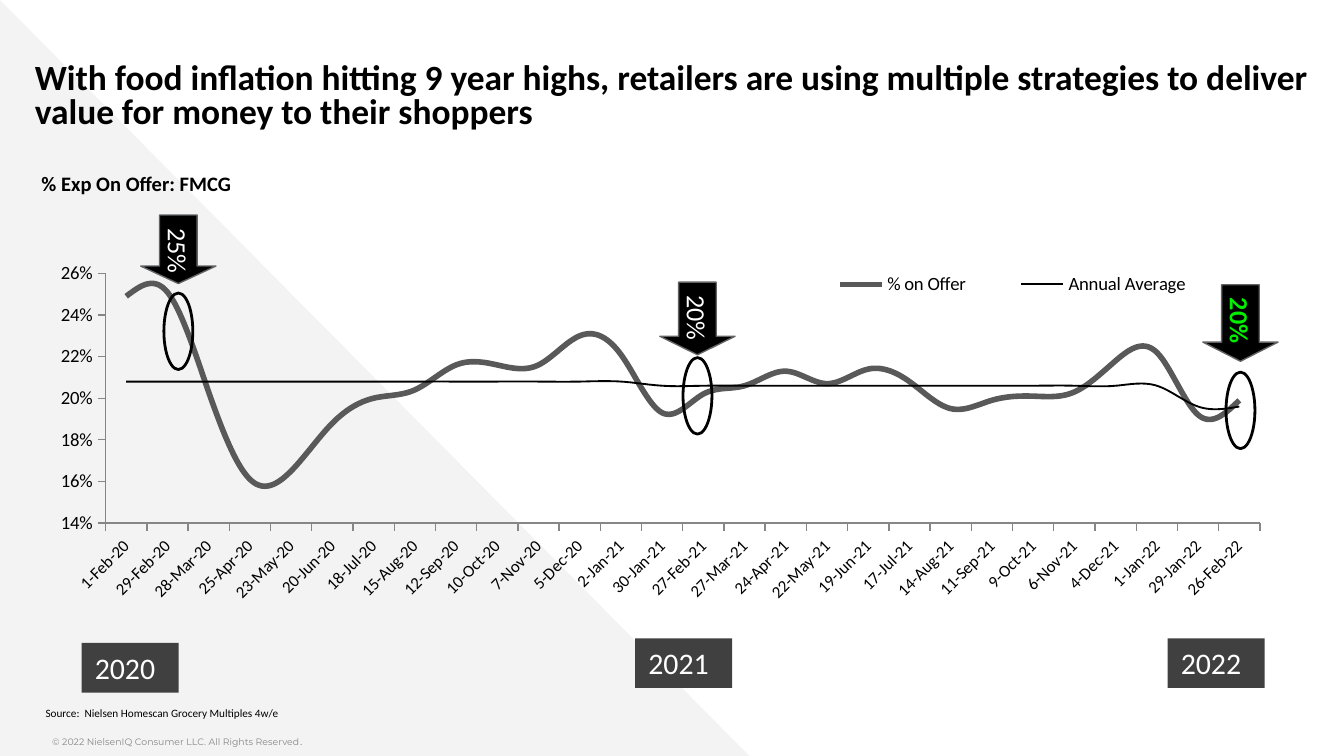
from pptx import Presentation
from pptx.chart.data import CategoryChartData as ChartData
from pptx.dml.color import RGBColor
from pptx.enum.chart import XL_CHART_TYPE as Kind, XL_LEGEND_POSITION as Side
from pptx.enum.chart import XL_MARKER_STYLE as Dot
from pptx.enum.chart import XL_TICK_LABEL_POSITION as Label, XL_TICK_MARK as Tick
from pptx.enum.shapes import MSO_SHAPE as Form
from pptx.enum.text import MSO_ANCHOR as Anchor, PP_ALIGN as Align
from pptx.oxml import parse_xml
from pptx.oxml.ns import nsdecls, qn
from pptx.util import Pt

OFFER = [
    0.249, 0.251, 0.203, 0.161, 0.165, 0.188, 0.2, 0.204, 0.216, 0.216,
    0.216, 0.23, 0.221, 0.193, 0.202, 0.206, 0.213, 0.207, 0.214, 0.208,
    0.195, 0.199, 0.201, 0.203, 0.218, 0.222, 0.192, 0.199,
]
MEAN = [0.208] * 13 + [0.206] * 13 + [0.196] * 2
DATES = range(43862, 44619, 28)
DAY = "d-mmm-yy"


def paint(part, color):
    part.solid()
    part.fore_color.rgb = RGBColor.from_string(color)


def style(font, size, color="000000", bold=False, name="Calibri"):
    font.size, font.bold, font.name = Pt(size), bold, name
    font.color.rgb = RGBColor.from_string(color)


def write(shape, text, size, color="000000", bold=False, name="Calibri",
          inset=(7.2, 3.6), wrap=False, anchor=Anchor.TOP, align=Align.LEFT,
          space=None):
    frame = shape.text_frame
    frame.word_wrap = wrap
    frame.vertical_anchor = anchor
    frame.margin_left = frame.margin_right = Pt(inset[0])
    frame.margin_top = frame.margin_bottom = Pt(inset[1])
    para = frame.paragraphs[0]
    para.alignment = align
    if space:
        para.line_spacing = space
    run = para.add_run()
    run.text = text
    style(run.font, size, color, bold, name)
    return para


def label(slide, box, text, size, **form):
    shape = slide.shapes.add_textbox(*map(Pt, box))
    return write(shape, text, size, **form)


def draw(slide, form, box, fill=None, line=None, width=1):
    shape = slide.shapes.add_shape(form, *map(Pt, box))
    shape.shadow.inherit = False
    if fill:
        paint(shape.fill, fill)
    else:
        shape.fill.background()
    if line:
        paint(shape.line.fill, line)
        shape.line.width = Pt(width)
    else:
        shape.line.fill.background()
    return shape


def layout(x, y, w, h, inner=False):
    target = '<c:layoutTarget val="inner"/>' if inner else ""
    modes = "".join(f'<c:{k}Mode val="edge"/>' for k in "xy")
    sizes = "".join(f'<c:{k} val="{v}"/>' for k, v in zip("xywh", (x, y, w, h)))
    return parse_xml(f'<c:layout {nsdecls("c")}><c:manualLayout>{target}'
                     f'{modes}{sizes}</c:manualLayout></c:layout>')


def trend(slide, box):
    data = ChartData(number_format="0%")
    data.categories = DATES
    data.categories.number_format = DAY
    data.add_series("% on Offer", OFFER)
    data.add_series("Annual Average", MEAN)
    chart = slide.shapes.add_chart(Kind.LINE, *map(Pt, box), data).chart
    chart.has_title = False
    style(chart.font, 18, name="Arial")
    plot = chart.plots[0]
    plot.vary_by_categories = False
    for line, color, width in zip(plot.series, ("595959", "000000"), (3, 1)):
        paint(line.format.line.fill, color)
        line.format.line.width = Pt(width)
        line.smooth = True
        line.marker.style = Dot.NONE
    cat, val = chart.category_axis, chart.value_axis
    for axis, size, code in (cat, 9, DAY), (val, 10, "0%"):
        axis.has_major_gridlines = False
        axis.major_tick_mark = Tick.OUTSIDE
        axis.minor_tick_mark = Tick.NONE
        paint(axis.format.line.fill, "868686")
        axis.format.line.width = Pt(0.75)
        labels = axis.tick_labels
        labels.number_format, labels.number_format_is_linked = code, False
        style(labels.font, size)
    cat.tick_label_position = Label.LOW
    cat._element.find(qn("c:auto")).set("val", "0")
    cat._element.find(qn("c:txPr")).find(qn("a:bodyPr")).set("rot", "-2700000")
    val.minimum_scale, val.maximum_scale, val.major_unit = 0.14, 0.26, 0.02
    chart.has_legend = True
    key = chart.legend
    key.position, key.include_in_layout = Side.RIGHT, False
    style(key.font, 10)
    for old in key._element.findall(qn("c:layout")):
        key._element.remove(old)
    spot = key._element.find(qn("c:legendPos"))
    spot.addnext(layout(0.59, 0.03, 0.35, 0.09))
    area = chart._chartSpace.chart.plotArea
    for old in area.findall(qn("c:layout")):
        area.remove(old)
    area.insert(0, layout(0.05, 0.05, 0.91, 0.57, True))


def mark(slide, box, tall, text, color="FFFFFF", bold=False):
    x, y, w, h = box
    ring_w, ring_h = 15.5, 41
    draw(slide, Form.OVAL, (x + (w - ring_w) / 2, y + h - ring_h, ring_w, ring_h),
         line="000000", width=1.5)
    arrow = draw(slide, Form.DOWN_ARROW, (x, y, w, tall), "000000", "616365", 0.75)
    arrow.adjustments[0], arrow.adjustments[1] = 0.5, 0.255
    write(arrow, text, 14, color=color, bold=bold,
          anchor=Anchor.MIDDLE, align=Align.CENTER)
    arrow.text_frame._txBody.bodyPr.set("vert", "eaVert")


def year(slide, box, text):
    write(draw(slide, Form.RECTANGLE, box, "404040"), text, 16, color="FFFFFF")


def head(slide, box):
    x, y, w, h = box
    label(slide, (x, y, w, 47.5),
          "With food inflation hitting 9 year highs, retailers are using "
          "multiple strategies to deliver value for money to their shoppers",
          19, bold=True, inset=(0, 7.2), wrap=True, space=0.8)
    label(slide, (x - 3.6, y + h - 21, 120, 21), "% Exp On Offer: FMCG", 11, bold=True)


def foot(slide, box):
    x, y, w, h = box
    para = label(slide, (x, y, w, h), "Source:  Nielsen Homescan Grocery Multiples 4w/e",
                 6, inset=(0, 7.2), wrap=True)
    para._p.get_or_add_pPr().set("marL", str(Pt(8.64)))
    para = label(slide, (x + 12.2, y + 16.4, 399, 14.4),
                 "© 2022 NielsenIQ Consumer LLC. All Rights Reserved", 5,
                 color="888888", name="Montserrat", inset=(0, 3.6), wrap=True)
    dot = para.add_run()
    dot.text = "."
    style(dot.font, 5, "888888")


def main():
    deck = Presentation()
    deck.slide_width, deck.slide_height = Pt(720), Pt(405)
    slide = deck.slides.add_slide(deck.slide_layouts[6])
    draw(slide, Form.RIGHT_TRIANGLE, (0, 0, 402.5, 406), "F3F3F3")
    trend(slide, (22.6, 134.8, 679.6, 234.6))
    head(slide, (18.7, 26.6, 684.7, 82.2))
    mark(slide, (75.4, 115.2, 40.3, 82.8), 36.7, "25%")
    mark(slide, (353.5, 151.2, 40.3, 81.4), 38.9, "20%")
    mark(slide, (644.4, 152.6, 40.3, 87.8), 41, "20%", color="00F000", bold=True)
    for text, x, y in ("2020", 43.7, 344.5), ("2021", 340.3, 342), ("2022", 625.5, 342):
        year(slide, (x, y, 52, 26.6), text)
    foot(slide, (15.8, 374.6, 360, 30.4))
    deck.save("out.pptx")


if __name__ == "__main__":
    main()
